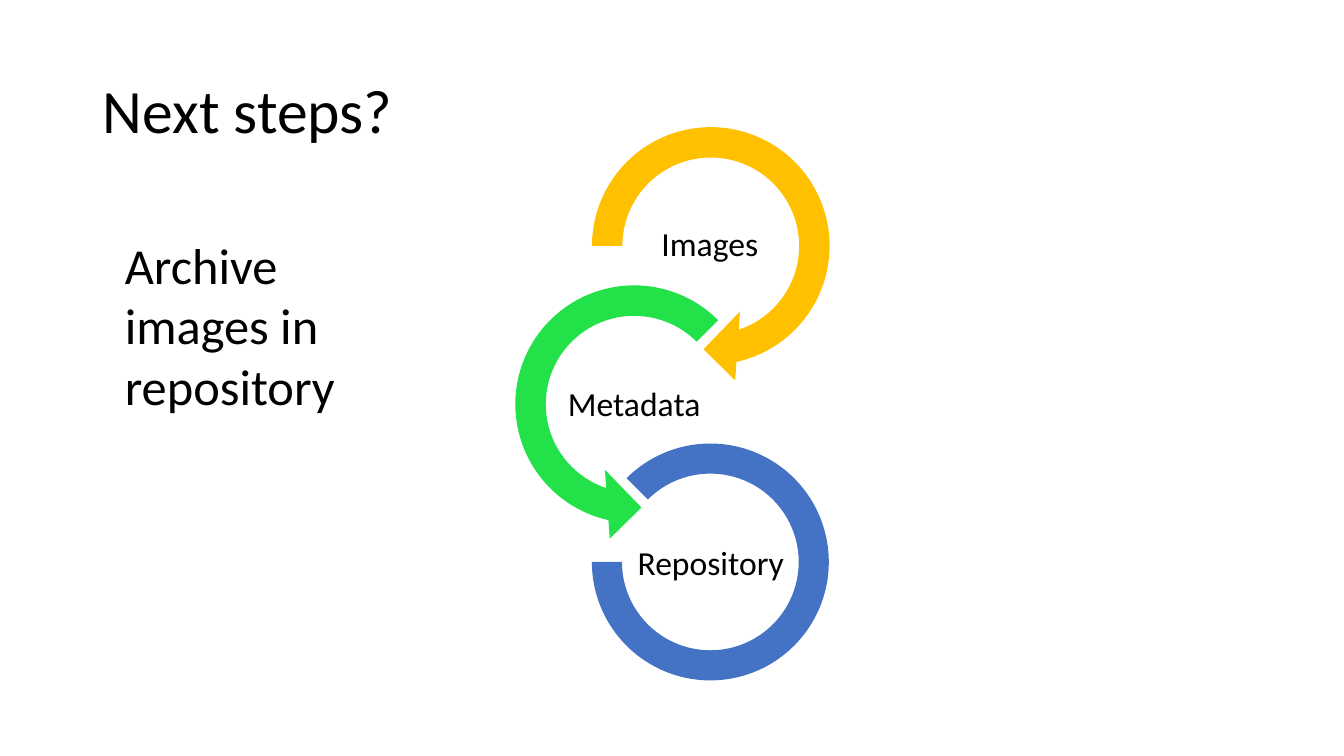
from pptx import Presentation
from pptx.dml.color import RGBColor
from pptx.enum.shapes import MSO_SHAPE
from pptx.enum.text import MSO_ANCHOR, PP_ALIGN
from pptx.util import Inches, Pt

BLACK = RGBColor(0x00, 0x00, 0x00)
AMBER = RGBColor(0xFF, 0xC0, 0x00)
GREEN = RGBColor(0x23, 0xE1, 0x48)
BLUE = RGBColor(0x44, 0x72, 0xC4)


class StepsPage:
    font_name = "Calibri"

    def __init__(self, deck):
        self.page = deck.slides.add_slide(deck.slide_layouts[5])

    def fill_text(self, box, text, size, align=PP_ALIGN.LEFT, spacing=1.0):
        frame = box.text_frame
        frame.word_wrap = True
        frame.text = text
        para = frame.paragraphs[0]
        para.alignment = align
        para.line_spacing = spacing
        for span in para.runs:
            span.font.name = self.font_name
            span.font.size = Pt(size)
            span.font.color.rgb = BLACK
        return frame

    def title(self, text, left, top, width, height):
        box = self.page.shapes.title
        box.left, box.top = Inches(left), Inches(top)
        box.width, box.height = Inches(width), Inches(height)
        frame = self.fill_text(box, text, 44, spacing=0.9)
        frame.vertical_anchor = MSO_ANCHOR.MIDDLE

    def text_box(self, left, top, width, height):
        return self.page.shapes.add_textbox(
            Inches(left), Inches(top), Inches(width), Inches(height))

    def note(self, text, left, top, width, height):
        self.fill_text(self.text_box(left, top, width, height), text, 36)

    def ring_label(self, text, left, top):
        box = self.text_box(left, top, 1.52, 0.76)
        frame = self.fill_text(box, text, 24, PP_ALIGN.CENTER, 0.9)
        frame.vertical_anchor = MSO_ANCHOR.MIDDLE
        frame.margin_left = frame.margin_right = Inches(0.02)
        frame.margin_top = frame.margin_bottom = Inches(0.02)

    def ring(self, kind, left, top, size, color, adjustments):
        ring = self.page.shapes.add_shape(
            kind, Inches(left), Inches(top), Inches(size), Inches(size))
        for index, value in enumerate(adjustments):
            ring.adjustments[index] = value
        ring.shadow.inherit = False
        ring.fill.solid()
        ring.fill.fore_color.rgb = color
        ring.line.fill.background()


def main():
    deck = Presentation()
    deck.slide_width, deck.slide_height = Inches(13.33), Inches(7.5)
    page = StepsPage(deck)
    page.title("Next steps?", 0.92, 0.4, 11.5, 1.45)

    steps = [
        ("Images", 6.28, 2.06, MSO_SHAPE.CIRCULAR_ARROW, 5.68, 1.07, 2.74,
         AMBER, (0.11, 11.423, 45, 108, 0.125)),
        ("Metadata", 5.53, 3.64, MSO_SHAPE.LEFT_CIRCULAR_ARROW, 4.92, 2.64, 2.74,
         GREEN, (0.11, 11.423, 63, 189, 0.125)),
        ("Repository", 6.29, 5.22, MSO_SHAPE.BLOCK_ARC, 5.87, 4.4, 2.35,
         BLUE, (135, 108, 0.127)),
    ]
    for label, label_left, label_top, *ring in steps:
        page.ring(*ring)
        page.ring_label(label, label_left, label_top)

    page.note("Archive images in repository", 1.14, 2.27, 3.16, 1.92)
    deck.save("out.pptx")


if __name__ == "__main__":
    main()
